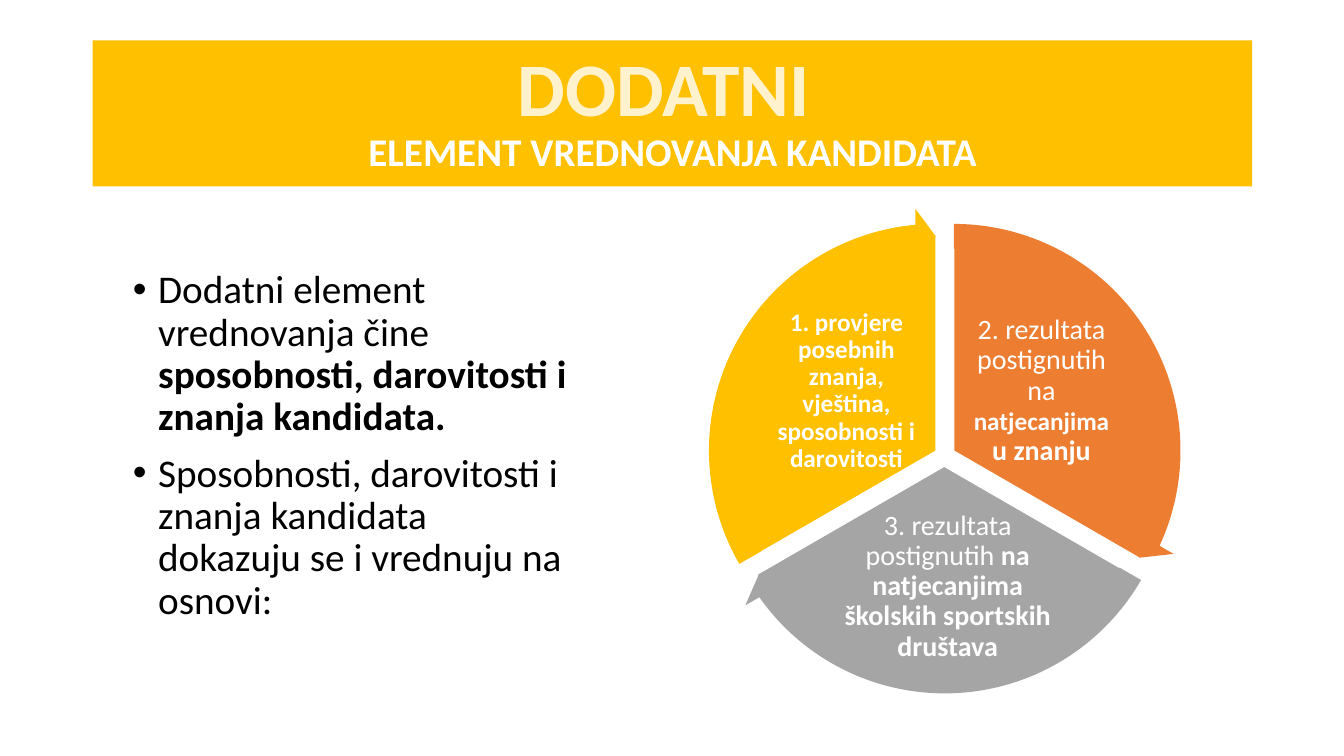
from lxml import etree
from pptx import Presentation
from pptx.dml.color import RGBColor
from pptx.enum.shapes import MSO_SHAPE
from pptx.enum.text import MSO_ANCHOR, PP_ALIGN
from pptx.oxml.ns import qn
from pptx.util import Inches, Pt

GOLD = RGBColor(0xFF, 0xC0, 0x00)
CREAM = RGBColor(0xFF, 0xF2, 0xCC)
ORANGE = RGBColor(0xED, 0x7D, 0x31)
GRAY = RGBColor(0xA5, 0xA5, 0xA5)
WHITE = RGBColor(0xFF, 0xFF, 0xFF)
BLACK = RGBColor(0x00, 0x00, 0x00)
FONT = "Calibri"

# Runs are (text, size, bold).
TITLE = [("DODATNI ", 54, CREAM), ("ELEMENT VREDNOVANJA KANDIDATA", 28, WHITE)]
BULLETS = [
    [("Dodatni element vrednovanja čine ", 28, False),
     ("sposobnosti, darovitosti i znanja kandidata.", 28, True)],
    [("Sposobnosti, darovitosti i znanja kandidata dokazuju se i vrednuju na osnovi:", 28, False)],
]
# Angles run clockwise in degrees from three o'clock; boxes are left, top, width, height.
SECTORS = [
    {"color": ORANGE, "start": 270, "end": 30,
     "pie": (7.33, 2.33, 4.26, 4.29), "arrow": (7.05, 2.06), "label": (9.57, 3.24, 1.52, 1.28),
     "runs": [("2. rezultata postignutih na ", 20, False), ("natjecanjima", 18, True),
              (" u znanju", 20, True)]},
    {"color": GRAY, "start": 30, "end": 150,
     "pie": (7.22, 2.48, 4.29, 4.29), "arrow": (6.96, 2.22), "label": (8.25, 5.26, 2.3, 1.12),
     "runs": [("3. rezultata postignutih ", 20, False),
              ("na natjecanjima školskih sportskih društava", 20, True)]},
    {"color": GOLD, "start": 150, "end": 270,
     "pie": (7.14, 2.33, 4.29, 4.29), "arrow": (6.87, 2.06), "label": (7.63, 3.24, 1.53, 1.28),
     "runs": [("1. provjere posebnih znanja, vještina, sposobnosti i darovitosti", 18, True)]},
]
ARROW_SIZE = 4.82
ARROW_HEAD = 5.46
DEGREE = 0.6  # one degree as a python-pptx adjustment value


def add_filled(slide, kind, box, color):
    shape = slide.shapes.add_shape(kind, *map(Inches, box))
    shape.shadow.inherit = False
    shape.fill.solid()
    shape.fill.fore_color.rgb = color
    shape.line.fill.background()
    return shape


def add_text_box(slide, box, margins, anchor):
    frame = slide.shapes.add_textbox(*map(Inches, box)).text_frame
    frame.word_wrap = True
    frame.vertical_anchor = anchor
    frame.margin_left = frame.margin_right = Inches(margins[0])
    frame.margin_top = frame.margin_bottom = Inches(margins[1])
    return frame


def write_runs(paragraph, runs, color):
    paragraph.line_spacing = 0.9
    paragraph.font.name = FONT
    paragraph.font.color.rgb = color
    for text, size, bold in runs:
        run = paragraph.add_run()
        run.text = text
        run.font.name = FONT
        run.font.color.rgb = color
        run.font.size = Pt(size)
        run.font.bold = bold


def add_bullet(paragraph):
    properties = paragraph._p.get_or_add_pPr()
    properties.set("marL", str(Inches(0.25)))
    properties.set("indent", str(-Inches(0.25)))
    etree.SubElement(properties, qn("a:buFont")).set("typeface", "Arial")
    etree.SubElement(properties, qn("a:buChar")).set("char", "•")


def add_title(slide):
    banner = add_filled(slide, MSO_SHAPE.RECTANGLE, (0.92, 0.4, 11.5, 1.45), GOLD)
    frame = banner.text_frame
    frame.word_wrap = True
    frame.vertical_anchor = MSO_ANCHOR.MIDDLE
    paragraph = frame.paragraphs[0]
    paragraph.alignment = PP_ALIGN.CENTER
    for index, (text, size, color) in enumerate(TITLE):
        if index:
            paragraph.add_line_break()
        write_runs(paragraph, [(text, size, True)], color)


def add_body(slide):
    frame = add_text_box(slide, (1.22, 2.63, 4.61, 3.84), (0.1, 0.05), MSO_ANCHOR.TOP)
    for index, runs in enumerate(BULLETS):
        paragraph = frame.add_paragraph() if index else frame.paragraphs[0]
        write_runs(paragraph, runs, BLACK)
        paragraph.space_before = Pt(10)
        add_bullet(paragraph)


def add_cycle(slide):
    for sector in SECTORS:
        pie = add_filled(slide, MSO_SHAPE.PIE, sector["pie"], sector["color"])
        pie.line.color.rgb = WHITE
        pie.line.width = Pt(1)
        pie.adjustments[0] = sector["start"] * DEGREE
        pie.adjustments[1] = sector["end"] * DEGREE

        frame = add_text_box(slide, sector["label"], (0.03, 0.03), MSO_ANCHOR.MIDDLE)
        frame.paragraphs[0].alignment = PP_ALIGN.CENTER
        write_runs(frame.paragraphs[0], sector["runs"], WHITE)

    for sector in SECTORS:
        box = (*sector["arrow"], ARROW_SIZE, ARROW_SIZE)
        arrow = add_filled(slide, MSO_SHAPE.CIRCULAR_ARROW, box, sector["color"])
        tip = (sector["end"] - ARROW_HEAD) * DEGREE
        values = (0.051, ARROW_HEAD * DEGREE, tip, sector["start"] * DEGREE, 0.059)
        for index, value in enumerate(values):
            arrow.adjustments[index] = value


def main():
    presentation = Presentation()
    presentation.slide_width = Inches(13.33)
    presentation.slide_height = Inches(7.5)
    slide = presentation.slides.add_slide(presentation.slide_layouts[6])
    add_title(slide)
    add_body(slide)
    add_cycle(slide)
    presentation.save("out.pptx")


if __name__ == "__main__":
    main()
